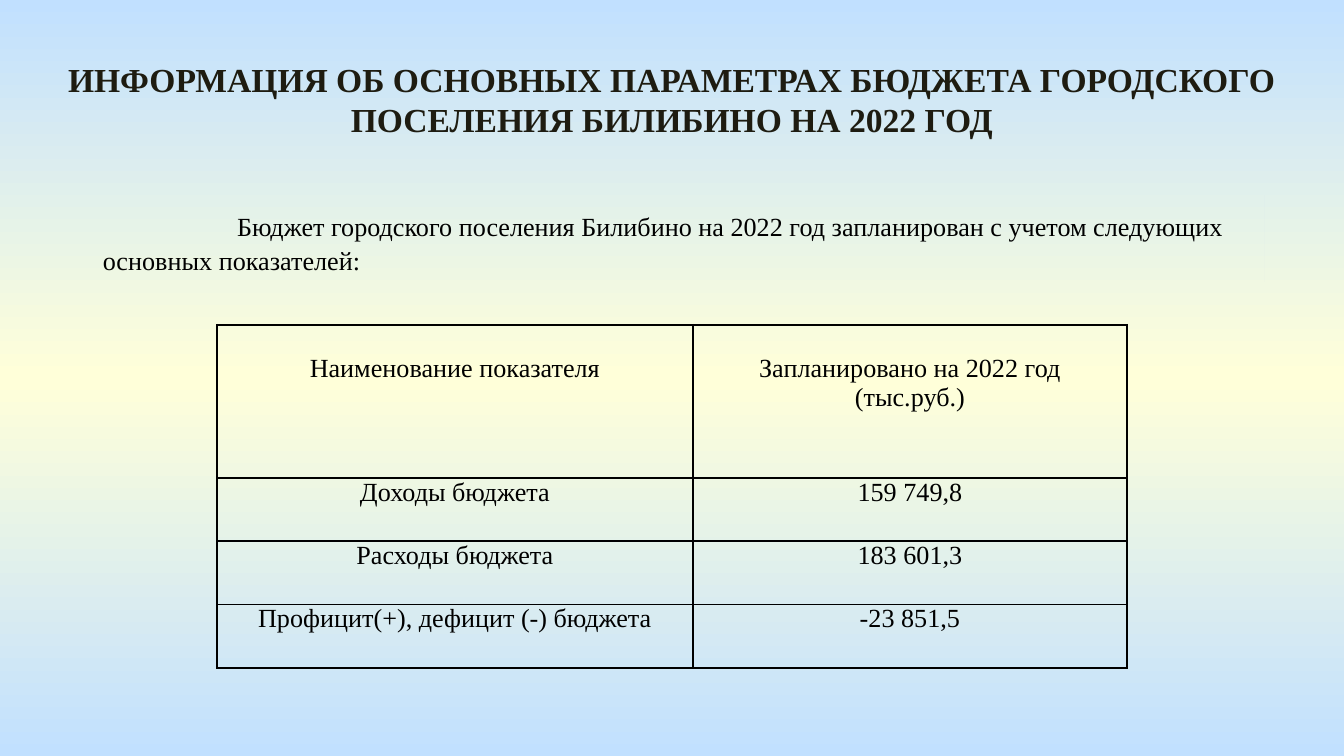
from copy import deepcopy

from lxml.etree import SubElement
from pptx import Presentation
from pptx.dml.color import RGBColor
from pptx.enum.shapes import MSO_SHAPE
from pptx.enum.text import MSO_ANCHOR, PP_ALIGN
from pptx.oxml.ns import qn
from pptx.util import Pt

FONT = "Times New Roman"
COLORS = {"sky": "C1E0FF", "cream": "FFFFD9", "title": "1E1C11", "ink": "000000"}
ROWS = [
    ("Наименование показателя", "Запланировано на 2022 год (тыс.руб.)"),
    ("Доходы бюджета", "159 749,8"),
    ("Расходы бюджета", "183 601,3"),
    ("Профицит(+), дефицит (-) бюджета", "-23 851,5"),
]
WIDTHS = (255, 232.5)
HEAD, BODY = 82, 34


def rgb(name):
    return RGBColor.from_string(COLORS[name])


def place(shape, left, top, width, height):
    shape.left, shape.top = Pt(left), Pt(top)
    shape.width, shape.height = Pt(width), Pt(height)


def write(para, text, size=14, color="ink", bold=False, align=PP_ALIGN.CENTER):
    para.alignment = align
    run = para.add_run()
    run.text = text
    font = run.font
    font.name, font.size, font.bold = FONT, Pt(size), bold
    font.color.rgb = rgb(color)


def paint(slide):
    """Vertical gradient with a light band in the middle."""
    fill = slide.background.fill
    fill.gradient()
    fill.gradient_angle = 270
    stops = slide.element.find(".//" + qn("a:gsLst"))
    stops.insert(1, deepcopy(stops[0]))
    names = ("sky", "cream", "sky")
    for stop, name, pos in zip(fill.gradient_stops, names, (0, 0.5, 1)):
        stop.color.rgb = rgb(name)
        stop.position = pos


def add_title(slide, text):
    title = slide.shapes.title
    place(title, 25, 28, 670, 51)
    frame = title.text_frame
    frame.word_wrap = True
    frame.vertical_anchor = MSO_ANCHOR.TOP
    write(frame.paragraphs[0], text, 18, "title", True)


def add_intro(slide, text):
    box = slide.shapes.add_shape(
        MSO_SHAPE.RECTANGLE, Pt(48), Pt(105), Pt(629.5), Pt(46))
    box.shadow.inherit = False
    box.line.fill.background()
    # Filled with the slide background instead of the theme style
    box.element.remove(box.element.find(qn("p:style")))
    box.element.set("useBgFill", "1")
    frame = box.text_frame
    frame.word_wrap = True
    frame.vertical_anchor = MSO_ANCHOR.TOP
    frame.margin_top = Pt(6)
    para = frame.paragraphs[0]
    para.line_spacing = 1.1
    write(para, text, align=PP_ALIGN.LEFT)
    # First-line indent
    para._p.get_or_add_pPr().set("indent", str(Pt(72)))


def add_border(cell):
    props = cell._tc.get_or_add_tcPr()
    for i, side in enumerate(("lnL", "lnR", "lnT", "lnB")):
        line = props.makeelement(qn("a:" + side), {"w": str(Pt(1))})
        fill = SubElement(line, qn("a:solidFill"))
        SubElement(fill, qn("a:srgbClr"), val=COLORS["ink"])
        props.insert(i, line)


def add_grid(slide):
    height = HEAD + BODY * (len(ROWS) - 1)
    shape = slide.shapes.add_table(
        len(ROWS), len(WIDTHS), Pt(116.25), Pt(174), Pt(sum(WIDTHS)), Pt(height))
    table = shape.table
    table.first_row = table.horz_banding = False
    for col, width in zip(table.columns, WIDTHS):
        col.width = Pt(width)
    for r, texts in enumerate(ROWS):
        table.rows[r].height = Pt(BODY if r else HEAD)
        for c, text in enumerate(texts):
            cell = table.cell(r, c)
            cell.margin_left = cell.margin_right = Pt(5)
            cell.margin_top = Pt(0 if r else 16)
            cell.margin_bottom = Pt(0)
            cell.fill.background()
            add_border(cell)
            write(cell.text_frame.paragraphs[0], text)


def main():
    deck = Presentation()
    deck.slide_width, deck.slide_height = Pt(720), Pt(405)
    slide = deck.slides.add_slide(deck.slide_layouts[5])
    paint(slide)
    add_title(slide, "ИНФОРМАЦИЯ ОБ ОСНОВНЫХ ПАРАМЕТРАХ БЮДЖЕТА "
                     "ГОРОДСКОГО ПОСЕЛЕНИЯ БИЛИБИНО НА 2022 ГОД")
    add_intro(slide, "Бюджет городского поселения Билибино на 2022 год "
                     "запланирован с учетом следующих основных показателей:")
    add_grid(slide)
    deck.save("out.pptx")


if __name__ == "__main__":
    main()
